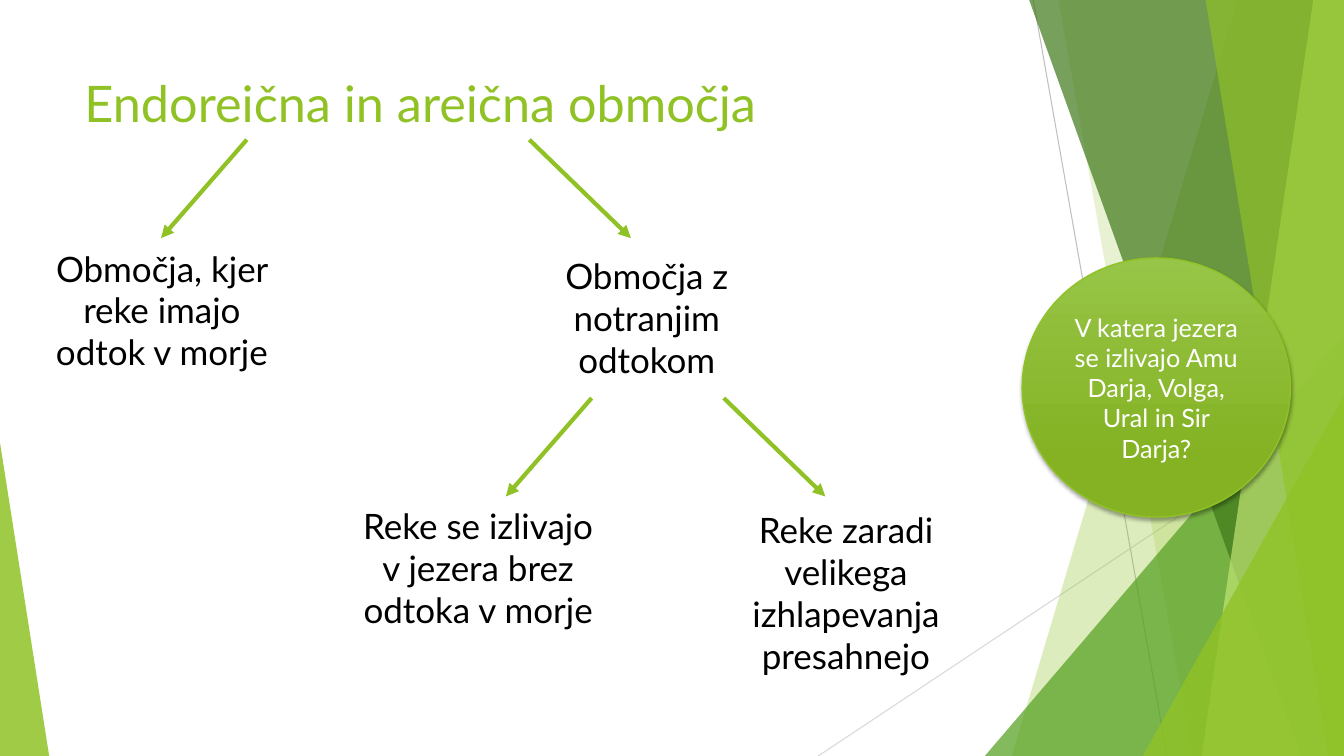
"""Build a slide on endorheic and areic regions as a small branching diagram."""
import pptx
import pptx.util
import pptx.dml.color
import pptx.enum.dml
import pptx.enum.shapes
import pptx.enum.text
import pptx.oxml
import pptx.oxml.ns

Cm, Pt = pptx.util.Cm, pptx.util.Pt
RGBColor = pptx.dml.color.RGBColor
SHAPE = pptx.enum.shapes.MSO_SHAPE
ALIGN = pptx.enum.text.PP_ALIGN
ANCHOR = pptx.enum.text.MSO_ANCHOR

GREEN = RGBColor(0x90, 0xC2, 0x26)
MID_GREEN = RGBColor(0x54, 0xA0, 0x21)
DARK_GREEN = RGBColor(0x3F, 0x78, 0x19)
PALE_GREEN = RGBColor(0xC0, 0xE4, 0x74)
BUBBLE_TOP = RGBColor(0x97, 0xC5, 0x47)
BUBBLE_BOTTOM = RGBColor(0x84, 0xB2, 0x23)
GREY = RGBColor(0xBF, 0xBF, 0xBF)
LIGHT_GREY = RGBColor(0xD9, 0xD9, 0xD9)
BLACK = RGBColor(0, 0, 0)
WHITE = RGBColor(0xFF, 0xFF, 0xFF)

WIDTH, HEIGHT, BAND_TOP = 33.87, 19.05, -0.02

TITLE = ("Endoreična in areična območja", (1.88, 1.7, 23.88, 3.66))
QUESTION = ("V katera jezera se izlivajo Amu Darja, Volga, Ural in Sir Darja?",
            (25.76, 6.5, 6.76, 6.53))
BRANCH_WIDTH = 6.48
BRANCHES = [
    ("Območja, kjer reke imajo odtok v morje", 0.84, 6.1, 3.45),
    ("Območja z notranjim odtokom", 13.06, 6.3, 3.45),
    ("Reke se izlivajo v jezera brez odtoka v morje", 8.81, 12.6, 5.59),
    ("Reke zaradi velikega izhlapevanja presahnejo", 18.08, 12.7, 4.52),
]
TO_LEFT, TO_RIGHT = (-2.16, 2.48), (2.56, 2.48)
ARROWS = [
    ((6.22, 3.52), TO_LEFT),
    ((13.34, 3.52), TO_RIGHT),
    ((14.91, 10.03), TO_LEFT),
    ((18.24, 10.03), TO_RIGHT),
]
HAIRLINES = [
    ((26.04, 0), (29.41, HEIGHT), GREY),
    ((WIDTH, 10.24), (20.62, HEIGHT), LIGHT_GREY),
]
FACETS = [
    ("band", (31.19, 25.5), GREEN, 30),
    ("band", (26.67, 30.05), GREEN, 20),
    ("triangle", (24.82, 8.46, WIDTH, 1), MID_GREEN, 72),
    ("band", (25.93, 32.79), DARK_GREEN, 70),
    ("band", (33.1, 30.28), PALE_GREEN, 70),
    ("band", (30.38, 33.48), GREEN, 65),
    ("triangle", (28.8, 9.98, WIDTH, 1), GREEN, 80),
    ("triangle", (0, 11.15, 1.24, 0), GREEN, 85),
]
TITLE_FONT = {"size": Pt(36), "name": "Lato"}
BRANCH_FONT = {"size": Pt(25), "name": "Lato"}
QUESTION_FONT = {"size": Pt(18), "name": "Lato"}
SHADOW = (
    '<a:outerShdw %s blurRad="38100" dist="25400" dir="5400000" algn="ctr" rotWithShape="0">'
    '<a:srgbClr val="000000"><a:alpha val="35000"/></a:srgbClr></a:outerShdw>'
    % pptx.oxml.ns.nsdecls("a")
)


def element(tag, **attributes):
    node = pptx.oxml.parse_xml("<a:%s %s/>" % (tag, pptx.oxml.ns.nsdecls("a")))
    for name, value in attributes.items():
        node.set(name, value)
    return node


def write(box, text, font, color, align):
    frame = box.text_frame
    frame.word_wrap = True
    para = frame.paragraphs[0]
    para.alignment = align
    span = para.add_run()
    span.text = text
    for name, value in font.items():
        setattr(span.font, name, value)
    span.font.color.rgb = color


def add_text(page, text, place, font, color, align):
    box = page.shapes.add_textbox(*map(Cm, place))
    write(box, text, font, color, align)


def add_line(page, start, end, color, width, arrow=False):
    line = page.shapes.add_connector(
        pptx.enum.shapes.MSO_CONNECTOR.STRAIGHT, *map(Cm, start + end))
    line.line.color.rgb = color
    line.line.width = Pt(width)
    if arrow:
        line.line._get_or_add_ln().append(element("tailEnd", type="triangle"))
    line._element.spPr.append(element("effectLst"))


def add_facet(page, kind, outline, color, opacity):
    if kind == "band":
        top_left, bottom_left = outline
        corners = [(WIDTH, BAND_TOP), (WIDTH, HEIGHT), (bottom_left, HEIGHT)]
        builder = page.shapes.build_freeform(Cm(top_left), Cm(BAND_TOP))
        builder.add_line_segments([(Cm(x), Cm(y)) for x, y in corners], close=True)
        facet = builder.convert_to_shape()
    else:
        left, top, right, apex = outline
        facet = page.shapes.add_shape(
            SHAPE.ISOSCELES_TRIANGLE, *map(Cm, (left, top, right - left, HEIGHT - top)))
        facet.adjustments[0] = apex
    facet.shadow.inherit = False
    facet.line.fill.background()
    facet.fill.solid()
    facet.fill.fore_color.rgb = color
    tint = facet._element.spPr.find(".//" + pptx.oxml.ns.qn("a:srgbClr"))
    tint.append(element("alpha", val=str(opacity * 1000)))


def add_question(page, text, place):
    bubble = page.shapes.add_shape(SHAPE.OVAL, *map(Cm, place))
    bubble.fill.gradient()
    bubble.fill.gradient_angle = 270
    stops = [(0, BUBBLE_TOP), (0.78, BUBBLE_BOTTOM)]
    for stop, (position, color) in zip(bubble.fill.gradient_stops, stops):
        stop.position = position
        stop.color.rgb = color
    bubble.line.color.rgb = GREEN
    bubble.line.width = Pt(1)
    bubble.shadow.inherit = False
    effects = bubble._element.spPr.find(pptx.oxml.ns.qn("a:effectLst"))
    effects.append(pptx.oxml.parse_xml(SHADOW))
    bubble.text_frame.vertical_anchor = ANCHOR.MIDDLE
    write(bubble, text, QUESTION_FONT, WHITE, ALIGN.CENTER)


def main():
    deck = pptx.Presentation()
    deck.slide_width, deck.slide_height = Cm(WIDTH), Cm(HEIGHT)
    page = deck.slides.add_slide(deck.slide_layouts[6])
    for start, end, color in HAIRLINES:
        add_line(page, start, end, color, 0.75)
    for facet in FACETS:
        add_facet(page, *facet)
    add_text(page, *TITLE, TITLE_FONT, GREEN, ALIGN.LEFT)
    for (x, y), (across, down) in ARROWS:
        add_line(page, (x, y), (x + across, y + down), GREEN, 3, arrow=True)
    for text, left, top, height in BRANCHES:
        place = (left, top, BRANCH_WIDTH, height)
        add_text(page, text, place, BRANCH_FONT, BLACK, ALIGN.CENTER)
    add_question(page, *QUESTION)
    deck.save("out.pptx")


if __name__ == "__main__":
    main()
